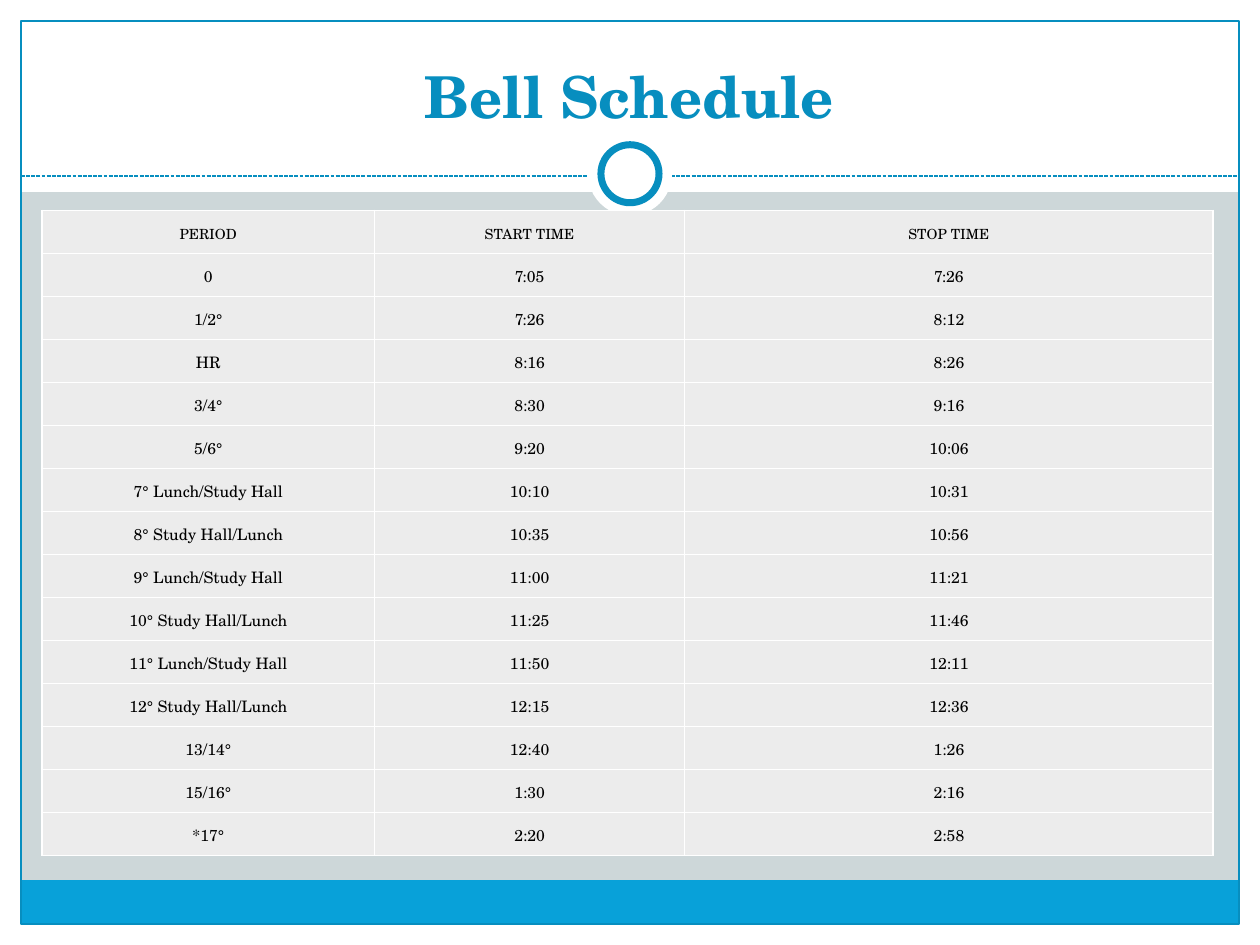
"""Build the bell schedule slide with its framed background and timetable."""
from lxml.etree import SubElement
from pptx import Presentation
from pptx.dml.color import RGBColor
from pptx.enum.dml import MSO_LINE_DASH_STYLE as Dash
from pptx.enum.shapes import MSO_CONNECTOR as Connector, MSO_SHAPE as Shape
from pptx.enum.text import MSO_ANCHOR as Anchor, MSO_AUTO_SIZE as AutoSize, PP_ALIGN as Align
from pptx.oxml import parse_xml
from pptx.oxml.ns import nsdecls, qn
from pptx.util import Pt

THEME = {
    "font": "TeX Gyre Schola",
    "background": RGBColor(0xCD, 0xD7, 0xD9),
    "white": RGBColor(0xFF, 0xFF, 0xFF),
    "bar": RGBColor(0x08, 0xA1, 0xD9),
    "accent": RGBColor(0x07, 0x8E, 0xBF),
    "cell": RGBColor(0xEC, 0xEC, 0xEC),
    "text": RGBColor(0, 0, 0),
    "title_size": Pt(33),
    "header_size": Pt(8),
    "cell_size": Pt(9),
}

SCHEDULE = [
    ("PERIOD", "START TIME", "STOP TIME"),
    ("0", "7:05", "7:26"),
    ("1/2°", "7:26", "8:12"),
    ("HR", "8:16", "8:26"),
    ("3/4°", "8:30", "9:16"),
    ("5/6°", "9:20", "10:06"),
    ("7° Lunch/Study Hall", "10:10", "10:31"),
    ("8° Study Hall/Lunch", "10:35", "10:56"),
    ("9° Lunch/Study Hall", "11:00", "11:21"),
    ("10° Study Hall/Lunch", "11:25", "11:46"),
    ("11° Lunch/Study Hall", "11:50", "12:11"),
    ("12° Study Hall/Lunch", "12:15", "12:36"),
    ("13/14°", "12:40", "1:26"),
    ("15/16°", "1:30", "2:16"),
    ("*17°", "2:20", "2:58"),
]
COLUMN_WIDTHS = [190, 177.3, 302]
ROW_HEIGHT = 24.58


def set_attributes(target, values):
    for name, value in values.items():
        setattr(target, name, value)


def write_text(paragraph, text, paragraph_format, size, color, bold=False):
    set_attributes(paragraph, paragraph_format)
    run = paragraph.add_run()
    run.text = text
    set_attributes(run.font, {"name": THEME["font"], "size": size, "bold": bold})
    run.font.color.rgb = color


presentation = Presentation()
set_attributes(presentation, {"slide_width": Pt(720), "slide_height": Pt(540)})
slide = presentation.slides.add_slide(presentation.slide_layouts[5])
slide.background.fill.solid()
slide.background.fill.fore_color.rgb = THEME["background"]

FRAME_SHAPES = [
    (Shape.RECTANGLE, (0, 528, 720, 12), "white", None),
    (Shape.RECTANGLE, (0, 0, 720, 109.7), "white", None),
    (Shape.RECTANGLE, (0, 0, 12, 540), "white", None),
    (Shape.RECTANGLE, (708, 0, 12, 540), "white", None),
    (Shape.RECTANGLE, (12, 503, 695.5, 24.5), "bar", None),
    (Shape.RECTANGLE, (12, 12, 696, 516), None, 0.75),
    (Connector.STRAIGHT, (12, 100.6, 708, 100.6), None, 0.75),
    (Shape.OVAL, (336, 75.3, 48, 48), "white", None),
    (Shape.OVAL, (343.4, 82.7, 33.2, 33.2), "white", 4),
]
for kind, bounds, fill, line_width in FRAME_SHAPES:
    lengths = [Pt(value) for value in bounds]
    if isinstance(kind, Connector):
        shape = slide.shapes.add_connector(kind, *lengths)
        SubElement(shape.element.spPr, qn("a:effectLst"))
        shape.line.dash_style = Dash.SQUARE_DOT
    else:
        shape = slide.shapes.add_shape(kind, *lengths)
        shape.shadow.inherit = False
        if fill:
            shape.fill.solid()
            shape.fill.fore_color.rgb = THEME[fill]
        else:
            shape.fill.background()
    if line_width:
        shape.line.color.rgb = THEME["accent"]
        shape.line.width = Pt(line_width)
    else:
        shape.line.fill.background()

title = slide.shapes.title
title.element.getparent().append(title.element)
set_attributes(title, {"left": Pt(23.76), "top": Pt(18), "width": Pt(672), "height": Pt(60)})
set_attributes(title.text_frame, {
    "vertical_anchor": Anchor.BOTTOM, "word_wrap": True, "auto_size": AutoSize.NONE,
})
write_text(title.text_frame.paragraphs[0], "Bell Schedule", {"alignment": Align.CENTER},
           THEME["title_size"], THEME["accent"], bold=True)

table = slide.shapes.add_table(
    len(SCHEDULE), len(COLUMN_WIDTHS), Pt(24), Pt(120.2),
    Pt(sum(COLUMN_WIDTHS)), Pt(ROW_HEIGHT * len(SCHEDULE)),
).table
set_attributes(table, {"first_row": False, "horz_banding": False})
for column, width in zip(table.columns, COLUMN_WIDTHS):
    column.width = Pt(width)

for row_index, entries in enumerate(SCHEDULE):
    table.rows[row_index].height = Pt(ROW_HEIGHT)
    size = THEME["cell_size"] if row_index else THEME["header_size"]
    paragraph_format = {
        "alignment": Align.CENTER,
        "line_spacing": 1.15,
        "space_after": Pt(4 if row_index < 2 else 0),
    }
    for column_index, text in enumerate(entries):
        cell = table.cell(row_index, column_index)
        set_attributes(cell, {
            "vertical_anchor": Anchor.MIDDLE, "margin_left": Pt(3), "margin_right": Pt(3),
            "margin_top": 0, "margin_bottom": 0,
        })
        write_text(cell.text_frame.paragraphs[0], text, paragraph_format, size, THEME["text"])
        properties = cell._tc.get_or_add_tcPr()
        for side in ("lnL", "lnR", "lnT", "lnB"):
            properties.append(parse_xml(
                f'<a:{side} {nsdecls("a")} w="{Pt(1)}"><a:solidFill>'
                f'<a:srgbClr val="{THEME["white"]}"/></a:solidFill></a:{side}>'
            ))
        cell.fill.solid()
        cell.fill.fore_color.rgb = THEME["cell"]

presentation.save("out.pptx")
